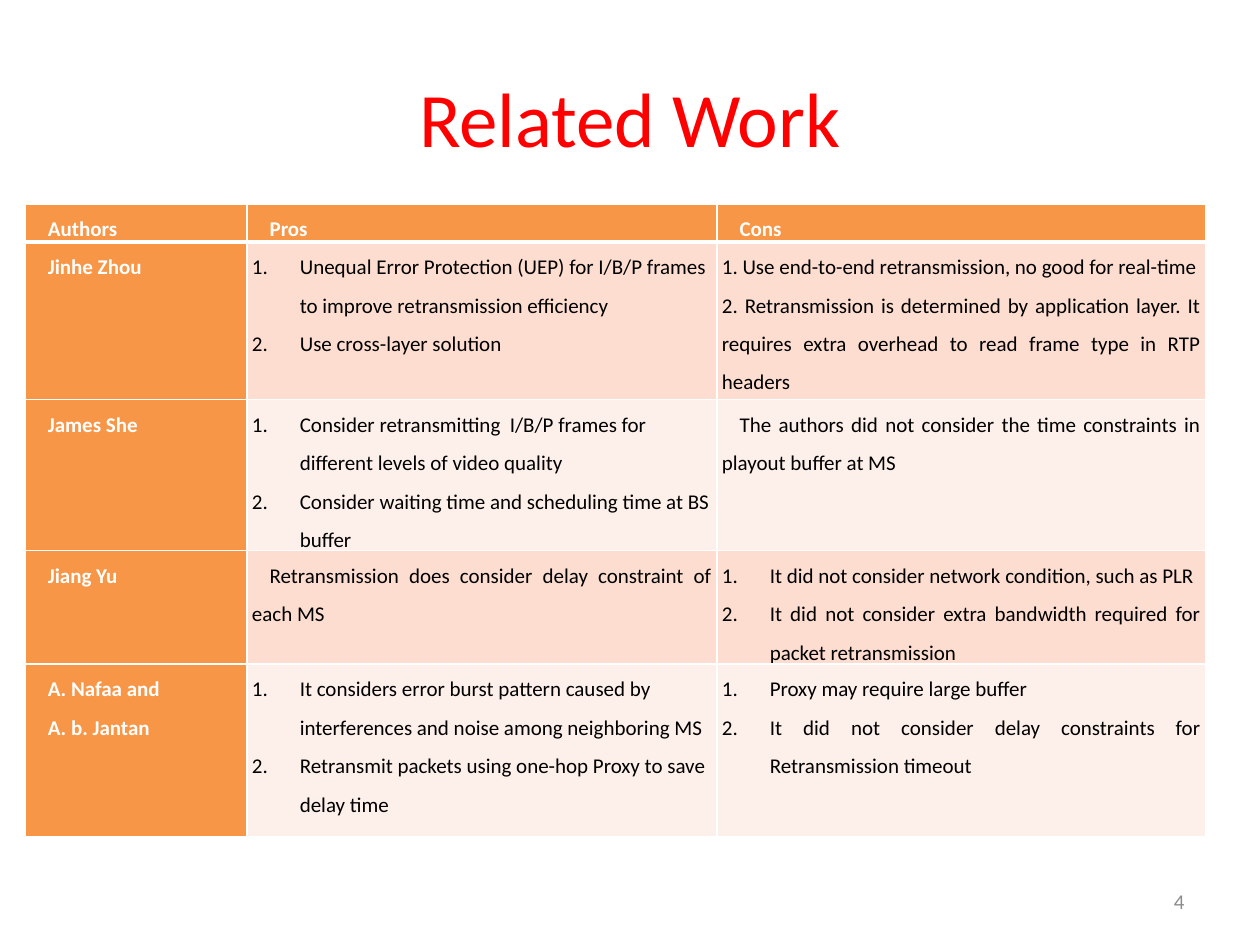
from lxml.etree import SubElement as Sub
from pptx import Presentation
from pptx.dml.color import RGBColor as RGB
from pptx.enum.text import MSO_ANCHOR as Anchor, PP_ALIGN as Align
from pptx.oxml.ns import qn
from pptx.util import Inches, Pt

INK = {"title": "FF0000", "page": "8C8C8C", "head": "F79646", "white": "FFFFFF",
       "black": "000000", "dark": "FCDDCF", "light": "FDEFE9"}

prs = Presentation()
prs.slide_width, prs.slide_height = Inches(10), Inches(7.5)
col, row = prs.slide_width / 100, prs.slide_height / 100
slide = prs.slides.add_slide(prs.slide_layouts[6])


def put(para, text, size, ink, align, bold=False):
    para.alignment = align
    run = para.add_run()
    run.text = text
    run.font.name, run.font.size, run.font.bold = "Calibri", Pt(size), bold
    run.font.color.rgb = RGB.from_string(INK[ink])


def rule(props, side, width):
    """Draw one white cell border."""
    line = Sub(props, qn(f"a:ln{side}"), w=str(Pt(width)))
    Sub(Sub(line, qn("a:solidFill")), qn("a:srgbClr"), val=INK["white"])


# Title and page number
for text, x, y, w, h, size, ink, align in [
    ("Related Work", 5, 4, 90, 16.67, 44, "title", Align.CENTER),
    ("4", 71.7, 92.67, 23.3, 5.33, 12, "page", Align.RIGHT),
]:
    box = slide.shapes.add_textbox(int(x * col), int(y * row), int(w * col), int(h * row))
    frame = box.text_frame
    frame.word_wrap, frame.vertical_anchor = True, Anchor.MIDDLE
    put(frame.paragraphs[0], text, size, ink, align)

# Each cell: layout of its paragraphs, alignment, then the paragraphs
L, J = Align.LEFT, Align.JUSTIFY
indents = {"first": (0, 0.14), "list": (0.38, -0.38), "flat": (0, 0)}
cells = [
    [("first", J, "Authors"), ("first", J, "Pros"), ("first", J, "Cons")],
    [("first", L, "Jinhe Zhou"),
     ("list", L, "Unequal Error Protection (UEP) for I/B/P frames to improve "
                 "retransmission efficiency", "Use cross-layer solution"),
     ("flat", J, "1. Use end-to-end retransmission, no good for real-time",
      "2. Retransmission is determined by application layer. It requires extra "
      "overhead to read frame type in RTP headers")],
    [("first", L, "James She"),
     ("list", L, "Consider retransmitting  I/B/P frames for different levels of "
                 "video quality",
      "Consider waiting time and scheduling time at BS buffer"),
     ("first", J, "The authors did not consider the time constraints in playout "
                  "buffer at MS")],
    [("first", J, "Jiang Yu"),
     ("first", J, "Retransmission does consider delay constraint of each MS"),
     ("list", J, "It did not consider network condition, such as PLR",
      "It did not consider extra bandwidth required for packet retransmission")],
    [("first", L, "A. Nafaa and", "A. b. Jantan"),
     ("list", L, "It considers error burst pattern caused by interferences and "
                 "noise among neighboring MS",
      "Retransmit packets using one-hop Proxy to save delay time"),
     ("list", J, "Proxy may require large buffer",
      "It did not consider delay constraints for Retransmission timeout")],
]
wide = [17.6, 37.3, 38.8]
high = [3.73, 16.67, 14.53, 10.8, 18.27]
table = slide.shapes.add_table(
    len(high), len(wide), int(2 * col), int(21.6 * row),
    int(sum(wide) * col), int(sum(high) * row)).table
for part, w in zip(table.columns, wide):
    part.width = int(w * col)
for part, h in zip(table.rows, high):
    part.height = int(h * row)

for r, line in enumerate(cells):
    for c, (kind, align, *texts) in enumerate(line):
        cell = table.cell(r, c)
        cell.margin_left = cell.margin_right = Inches(0.04)
        cell.margin_top = cell.margin_bottom = 0
        props = cell._tc.get_or_add_tcPr()
        for side in "LRTB":
            thick = (r, side) in [(0, "B"), (1, "T")]
            rule(props, side, 3 if thick else 1)
        head = r == 0 or c == 0
        cell.fill.solid()
        shade = "head" if head else "dark" if r % 2 else "light"
        cell.fill.fore_color.rgb = RGB.from_string(INK[shade])
        left, first = indents[kind]
        frame = cell.text_frame
        for i, text in enumerate(texts):
            para = frame.add_paragraph() if i else frame.paragraphs[0]
            para.line_spacing = 1.5
            put(para, text, 12, "white" if head else "black", align, head)
            fmt = para._p.get_or_add_pPr()
            fmt.set("marL", str(Inches(left)))
            fmt.set("indent", str(Inches(first)))
            if kind == "list":
                Sub(fmt, qn("a:buFont"), typeface="+mj-lt")
                Sub(fmt, qn("a:buAutoNum"), type="arabicPeriod")

prs.save("out.pptx")
